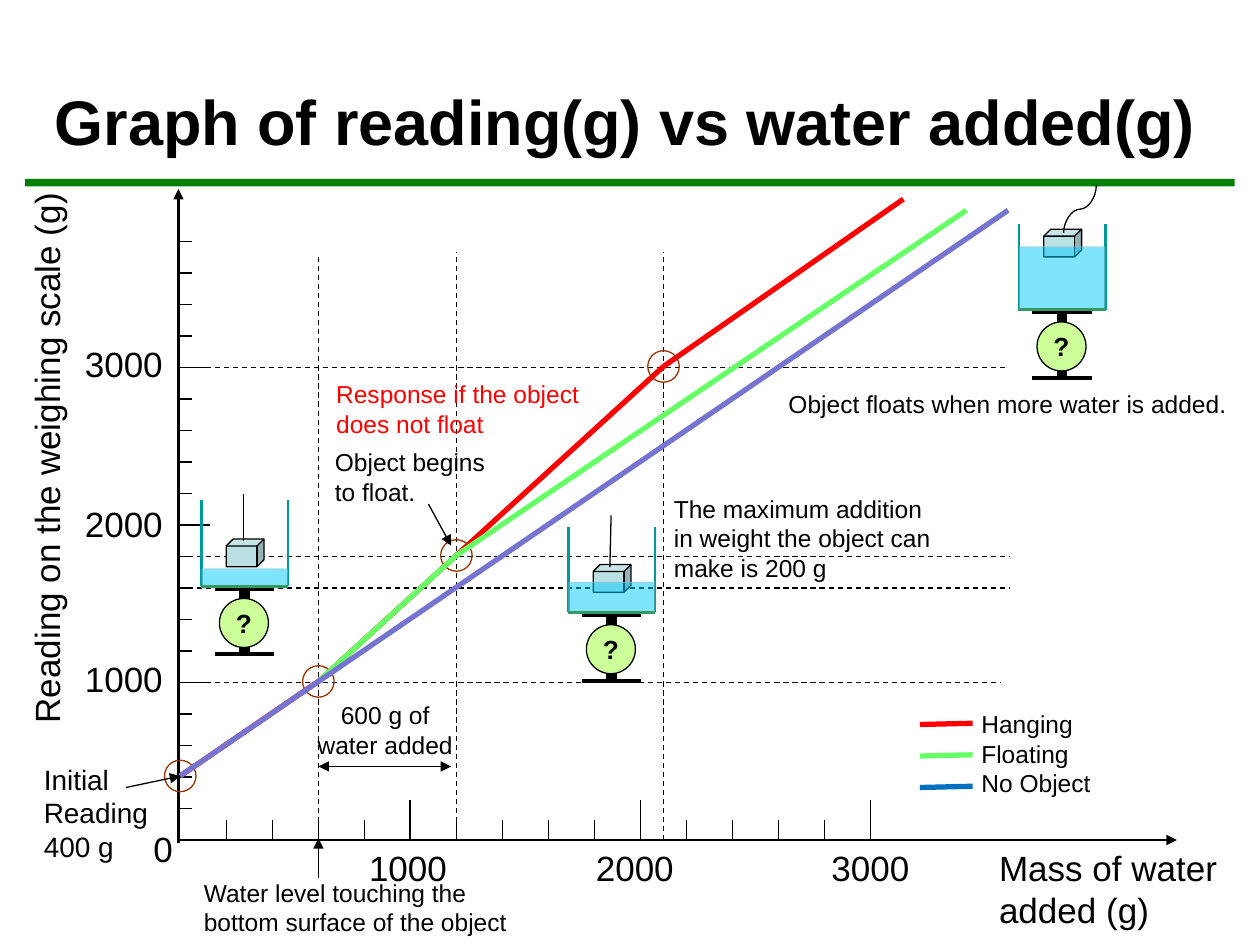
from lxml import etree
from pptx import Presentation
from pptx.dml.color import RGBColor
from pptx.enum.dml import MSO_LINE
from pptx.enum.shapes import MSO_CONNECTOR, MSO_SHAPE
from pptx.enum.text import MSO_ANCHOR, MSO_AUTO_SIZE, PP_ALIGN
from pptx.oxml.ns import qn
from pptx.util import Pt

STRAIGHT, CURVE = MSO_CONNECTOR.STRAIGHT, MSO_CONNECTOR.CURVE
RECT, OVAL, CUBE = MSO_SHAPE.RECTANGLE, MSO_SHAPE.OVAL, MSO_SHAPE.CUBE
LEFT, CENTER = PP_ALIGN.LEFT, PP_ALIGN.CENTER
DASH = MSO_LINE.DASH
MIDDLE = MSO_ANCHOR.MIDDLE
rgb = RGBColor.from_string
BLACK, RED, GREEN, VIOLET = "000000", "FF0000", "66FF66", "7575D1"

deck = Presentation()
deck.slide_width, deck.slide_height = Pt(720), Pt(540)
slide = deck.slides.add_slide(deck.slide_layouts[5])
shapes = slide.shapes


def line(start, end, color=BLACK, width=0.75, dash=None, ends=(), kind=STRAIGHT):
    """Draw a connector; ends names the arrowheads, headEnd before tailEnd."""
    item = shapes.add_connector(kind, *(Pt(v) for v in (*start, *end)))
    item.line.color.rgb = rgb(color)
    item.line.width = Pt(width)
    item.line.dash_style = dash
    props = item._element.spPr
    for tag in ends:
        etree.SubElement(props.find(qn("a:ln")), qn("a:" + tag), type="triangle")
    etree.SubElement(props, qn("a:effectLst"))
    return item


def write(frame, words, color=BLACK, align=LEFT, **style):
    """Fill a text frame, one paragraph for each line of words."""
    frame.word_wrap = True
    frame.auto_size = MSO_AUTO_SIZE.NONE
    frame.text = words
    for para in frame.paragraphs:
        para.alignment = align
        para.space_before = Pt(0)
        para.font.color.rgb = rgb(color)
        for key, value in {"name": "Arial", **style}.items():
            setattr(para.font, key, value)


# Title and rule
title = shapes.title
title.left, title.top, title.width, title.height = Pt(24), Pt(30), Pt(678), Pt(78)
title.text_frame.vertical_anchor = MIDDLE
write(title.text_frame, "Graph of reading(g) vs water added(g)", size=Pt(36), bold=True)
rule = shapes.add_shape(RECT, Pt(14.4), Pt(102.2), Pt(691.2), Pt(4.3))
rule.shadow.inherit = False
rule.fill.solid()
rule.fill.fore_color.rgb = rgb("008000")
rule.line.fill.background()

# Axes: a tick for each 200 g, a long one for each 1000 g
LEFT_X, BASE_Y, STEP_X, STEP_Y = 103, 480, 26.3, 18
line((102, BASE_Y), (672.5, BASE_Y), width=1.5, ends=["tailEnd"])
line((102, 481.5), (102, 108), width=1.5, ends=["tailEnd"])
for i in range(1, 20):
    major = i % 5 == 0
    width = 1 if major else 0.75
    y = BASE_Y - i * STEP_Y
    line((102, y), (120 if major else 110, y), width=width)
    if i <= 15:
        x = LEFT_X + i * STEP_X
        line((x, BASE_Y), (x, BASE_Y - (23 if major else 11.5)), width=width)

# Guides
for grams, top in (600, 147), (1200, 144), (2100, 144):
    x = LEFT_X + grams / 200 * STEP_X
    line((x, BASE_Y), (x, top), dash=DASH)
for grams, right in (1000, 572), (1600, 577), (1800, 577), (3000, 576):
    y = BASE_Y - grams / 200 * STEP_Y
    line((102, y), (right, y), dash=DASH)

# Curves, with a ring at each bend
bends = [(LEFT_X + x / 200 * STEP_X, BASE_Y - y / 200 * STEP_Y - 0.6)
         for x, y in ((0, 400), (600, 1000), (1200, 1800), (2100, 3000))]
first, touch, floats, sunk = bends
for start, end in (first, touch), (touch, sunk), (sunk, (516.2, 113.8)):
    line(start, end, RED, 3)
for x, y in bends:
    ring = shapes.add_shape(OVAL, Pt(x - 9), Pt(y - 9), Pt(18), Pt(18))
    ring.shadow.inherit = False
    ring.fill.background()
    ring.line.color.rgb = rgb("993300")
    ring.line.width = Pt(0.75)
line(touch, floats, GREEN, 3)
line(first, (576, 120.2), VIOLET, 3)
line(floats, (552.2, 120.2), GREEN, 3)

# Legend keys
for i, color in enumerate((RED, GREEN, "0070C0")):
    line((525.6, 414 + 18 * i), (555.8, 413.3 + 18 * i), color, 3)

# Pointers
line((72, 450), (103, 443.5), ends=["tailEnd"])
line((182, 502), (182, 479), ends=["tailEnd"])
line((244.8, 288), (257.8, 311.8), ends=["tailEnd"])
line((257.8, 438), (182, 438), width=1, ends=["headEnd", "tailEnd"])

# Labels: words, left, top, width, height, size, colour, alignment
labels = [
    ("0", 80.6, 469.4, 40, 31, 20, BLACK, LEFT),
    ("Reading on the weighing scale (g)", -132.5, 245.5, 318.3, 31.7, 20, BLACK, LEFT),
    ("Mass of water\nadded (g)", 563.8, 480, 144, 55.4, 20, BLACK, LEFT),
    ("Initial\nReading\n400 g", 18, 432, 80, 65.5, 16, BLACK, LEFT),
    ("Water level touching the bottom surface of the object",
     109.4, 498.2, 190.8, 41, 14, BLACK, LEFT),
    ("600 g of\nwater added", 169, 396.7, 102.2, 41, 14, BLACK, CENTER),
    ("Response if the object does not float", 185, 213.1, 164.2, 41, 14, RED, LEFT),
    ("The maximum addition in weight the object can make is 200 g",
     378, 278.6, 167.8, 58.3, 14, BLACK, LEFT),
    ("Object begins to float.", 184.3, 252, 113, 41, 14, BLACK, LEFT),
    ("Object floats when more water is added.", 443.5, 218.9, 266.4, 23.8, 14, BLACK, LEFT),
    ("Hanging\nFloating\nNo Object", 553.7, 401.8, 102.2, 58.3, 14, BLACK, LEFT),
]
for grams, x, y in (1000, 203.8, 372.2), (2000, 333.4, 283.7), (3000, 468, 192.2):
    labels.append((str(grams), x, 480.2, 62.6, 31.7, 20, BLACK, LEFT))
    labels.append((str(grams), 41.4, y, 69, 31.7, 20, BLACK, LEFT))
for words, x, y, w, h, size, color, align in labels:
    box = shapes.add_textbox(Pt(x), Pt(y), Pt(w), Pt(h))
    write(box.text_frame, words, color, align, size=Pt(size))
    if words.startswith("Reading on"):
        box.rotation = 270

# Tanks on scales: centre, floor, water depth, lift of the cube's top
for x, y, depth, lift in (607, 177, 35.3, 46), (139.8, 335, 9.4, 27), (349.5, 350, 16.6, 27.4):
    line((x, y + 1.5), (x, y + 39), width=6)
    for drop in 1.5, 39:
        line((x - 17, y + drop), (x + 17, y + drop), width=2.25)
    for side in -24.8, 24.8:
        line((x + side, y), (x + side, y - 49), "009999", 1.5)
    for kind, left, top, w, h, fill, edge in (
        (OVAL, x - 14.4, y + 7, 28, 28, "CCFF99", BLACK),
        (CUBE, x - 10.5, y - lift, 21.6, 15.8, "BBE0E3", BLACK),
        (RECT, x - 24.3, y - depth - 0.7, 48.6, depth, "00CCFF", "C0C0C0"),
    ):
        part = shapes.add_shape(kind, Pt(left), Pt(top), Pt(w), Pt(h))
        part.shadow.inherit = False
        part.fill.solid()
        part.fill.fore_color.rgb = rgb(fill)
        part.line.color.rgb = rgb(edge)
        part.line.width = Pt(0.75)
        if kind == OVAL:
            frame = part.text_frame
            frame.margin_left = frame.margin_right = frame.margin_top = frame.margin_bottom = 0
            frame.vertical_anchor = MIDDLE
            write(frame, "?", align=CENTER, size=Pt(15), bold=True)
        if kind == RECT:
            tints = part._element.spPr.iter(qn("a:srgbClr"))
            for tint, alpha in zip(tints, ("50000", "36000")):
                etree.SubElement(tint, qn("a:alpha"), val=alpha)
    line((x - 25, y), (x + 25, y), "339966", 1.5)

# Strings: two taut, one slack
line((139, 282.2), (139, 308.9))
line((349.2, 294.5), (348.5, 324))
slack = line((603.4, 110.2), (630.8, 128.9), kind=CURVE)
slack._element.spPr.find(qn("a:xfrm")).set("rot", "5400000")

deck.save("out.pptx")
